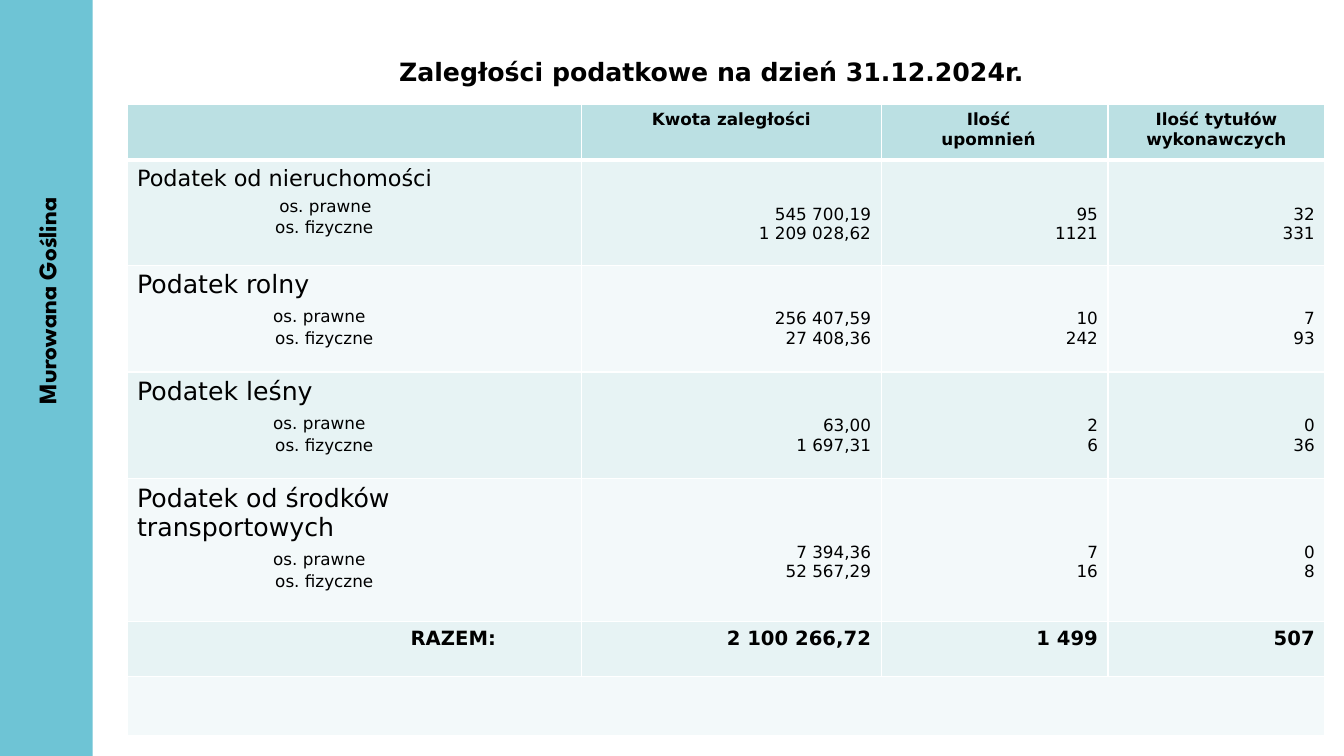
from dataclasses import dataclass

from lxml import etree
from pptx import Presentation
from pptx.dml.color import RGBColor
from pptx.enum import shapes, text
from pptx.oxml import ns
from pptx.util import Inches, Pt


@dataclass(frozen=True)
class Theme:
    sidebar: str = "6EC4D5"
    header: str = "BBE0E3"
    bands: tuple = ("E7F3F4", "F3F9FA")
    border: str = "FFFFFF"
    ink: str = "000000"
    font: str = "DejaVu Sans"
    town_font: str = "League Spartan"
    title: int = 18
    total: int = 14
    small: int = 12


THEME = Theme()
TOWN = "Murowana Goślina"
TITLE = "Zaległości podatkowe na dzień 31.12.2024r."

# Each header is a list of (line, right indent in inches)
HEADERS = [
    [],
    [("Kwota zaległości", 0)],
    [("Ilość", 0.12), ("upomnień", 0)],
    [("Ilość tytułów wykonawczych", 0)],
]
PAYERS = ("os. prawne", "os. fizyczne")
# Tax name, name size, indent of the first payer, lines above figures, figures
TAXES = [
    ("Podatek od nieruchomości", 16, 1.41, 2,
     [("545 700,19", "1 209 028,62"), ("95", "1121"), ("32", "331")]),
    ("Podatek rolny", 18, 1.35, 2,
     [("256 407,59", "27 408,36"), ("10", "242"), ("7", "93")]),
    ("Podatek leśny", 18, 1.35, 2,
     [("63,00", "1 697,31"), ("2", "6"), ("0", "36")]),
    ("Podatek od środków transportowych", 18, 1.35, 3,
     [("7 394,36", "52 567,29"), ("7", "16"), ("0", "8")]),
]
TOTALS = ["RAZEM:", "2 100 266,72", "1 499", "507"]

COLUMN_WIDTHS = [4.51, 2.97, 2.25, 2.15]
ROW_HEIGHTS = [0.55, 1.04, 1.06, 1.06, 1.42, 0.54, 0.59]
SECOND_PAYER_INDENT = 1.37
LINE_HEIGHT = 0.194
CELL_TOP = 0.05
TOTAL_LABEL_MARGIN = 0.85
ASCENT, DESCENT = 0.93, 0.24

LEFT, CENTER, RIGHT = (text.PP_ALIGN.LEFT, text.PP_ALIGN.CENTER, text.PP_ALIGN.RIGHT)


def write(frame, index, line, size, bold=False, align=LEFT, before=0,
          indent=0, right_indent=0, font=THEME.font):
    """Write one line as paragraph number index of the frame."""
    paragraph = frame.paragraphs[0] if index == 0 else frame.add_paragraph()
    paragraph.alignment = align
    if before:
        paragraph.space_before = Pt(before)
    for name, inches in (("marL", indent), ("marR", right_indent)):
        if inches:
            paragraph._p.get_or_add_pPr().set(name, str(Inches(inches)))
    run = paragraph.add_run()
    run.text = line
    run.font.name = font
    run.font.size = Pt(size)
    run.font.bold = bold
    run.font.color.rgb = RGBColor.from_string(THEME.ink)


def add_label(slide, box, line, font):
    label = slide.shapes.add_textbox(*map(Inches, box))
    label.text_frame.word_wrap = True
    write(label.text_frame, 0, line, THEME.title, bold=True, font=font)
    return label


def style_cell(cell, row):
    """Set the borders and band colour of a cell."""
    properties = cell._tc.get_or_add_tcPr()
    heavy_side = {0: "lnB", 1: "lnT"}.get(row)
    for side in ("lnL", "lnR", "lnT", "lnB"):
        line = etree.SubElement(properties, ns.qn(f"a:{side}"))
        line.set("w", str(Pt(3 if side == heavy_side else 1)))
        fill = etree.SubElement(line, ns.qn("a:solidFill"))
        etree.SubElement(fill, ns.qn("a:srgbClr")).set("val", THEME.border)
    colour = THEME.header if row == 0 else THEME.bands[(row - 1) % 2]
    cell.fill.solid()
    cell.fill.fore_color.rgb = RGBColor.from_string(colour)


def fill_tax_row(table, row, name, size, first_indent, lead_lines, figures):
    frame = table.cell(row, 0).text_frame
    write(frame, 0, name, size)
    extra = size - THEME.small
    gaps = (extra * ASCENT, extra * DESCENT)
    indents = (first_indent, SECOND_PAYER_INDENT)
    for index, (payer, gap, indent) in enumerate(zip(PAYERS, gaps, indents), 1):
        write(frame, index, payer, THEME.small, before=round(gap, 1), indent=indent)
    for column, pair in enumerate(figures, 1):
        cell = table.cell(row, column)
        cell.margin_top = Inches(CELL_TOP + lead_lines * LINE_HEIGHT)
        for index, figure in enumerate(pair):
            write(cell.text_frame, index, figure, THEME.small, align=RIGHT)


def add_arrears_table(slide):
    rows, columns = len(ROW_HEIGHTS), len(COLUMN_WIDTHS)
    table = slide.shapes.add_table(
        rows, columns, Inches(1.26), Inches(1.04),
        Inches(sum(COLUMN_WIDTHS)), Inches(sum(ROW_HEIGHTS))).table
    table.horz_banding = False
    for column, width in zip(table.columns, COLUMN_WIDTHS):
        column.width = Inches(width)
    for row, height in enumerate(ROW_HEIGHTS):
        table.rows[row].height = Inches(height)
        for column in range(columns):
            style_cell(table.cell(row, column), row)

    for column, lines in enumerate(HEADERS):
        for index, (line, right_indent) in enumerate(lines):
            write(table.cell(0, column).text_frame, index, line, THEME.small,
                  bold=True, align=CENTER, right_indent=right_indent)
    for row, tax in enumerate(TAXES, 1):
        fill_tax_row(table, row, *tax)
    total_row = len(TAXES) + 1
    for column, total in enumerate(TOTALS):
        write(table.cell(total_row, column).text_frame, 0, total,
              THEME.total, bold=True, align=RIGHT)
    table.cell(total_row, 0).margin_right = Inches(TOTAL_LABEL_MARGIN)
    table.cell(rows - 1, 0).merge(table.cell(rows - 1, columns - 1))


def main():
    presentation = Presentation()
    presentation.slide_width = Inches(13.33)
    presentation.slide_height = Inches(7.5)
    slide = presentation.slides.add_slide(presentation.slide_layouts[6])

    sidebar = slide.shapes.add_shape(
        shapes.MSO_SHAPE.RECTANGLE, 0, 0, Inches(0.92), Inches(7.5))
    sidebar.shadow.inherit = False
    sidebar.fill.solid()
    sidebar.fill.fore_color.rgb = RGBColor.from_string(THEME.sidebar)
    sidebar.line.fill.background()

    town = add_label(slide, (-0.8, 2.65, 2.52, 0.4), TOWN, THEME.town_font)
    town.rotation = 270
    add_arrears_table(slide)
    add_label(slide, (3.86, 0.51, 7.03, 0.4), TITLE, THEME.font)
    presentation.save("out.pptx")


if __name__ == "__main__":
    main()
